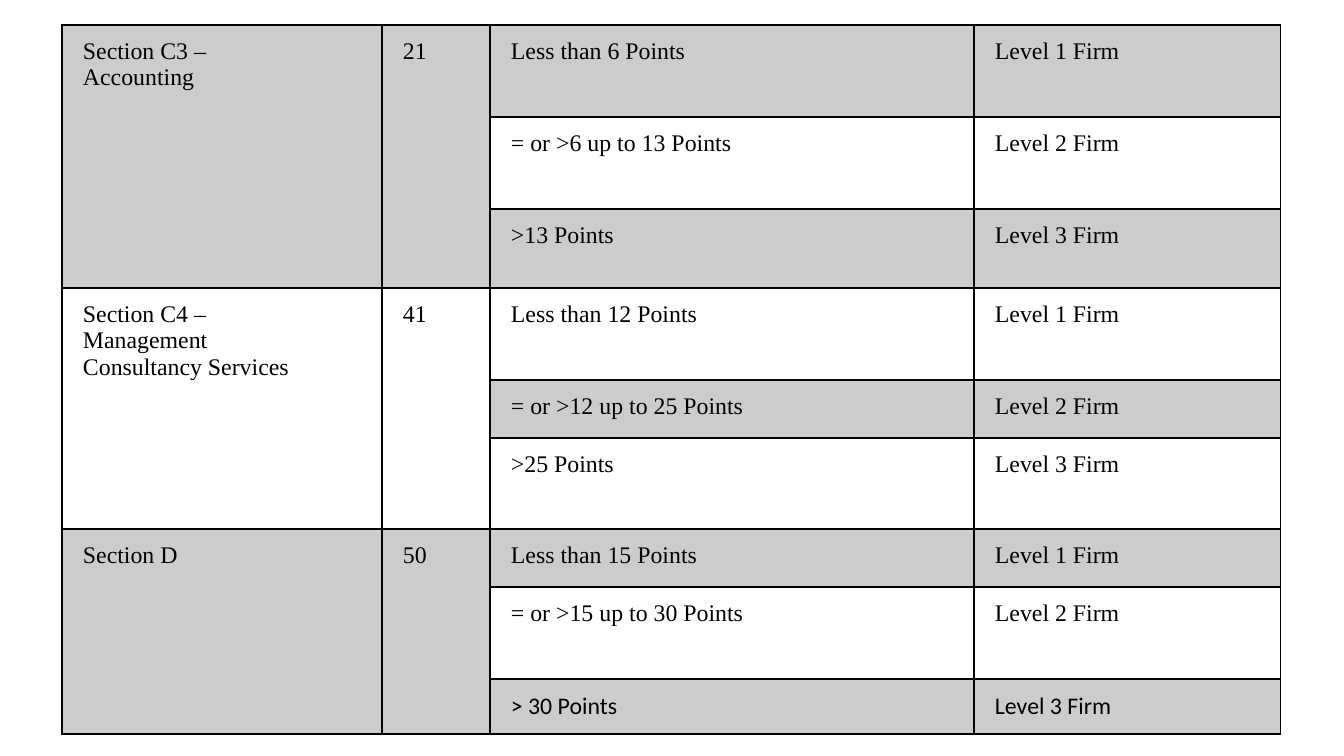
from lxml import etree
from pptx import Presentation
from pptx.dml.color import RGBColor
from pptx.enum.text import MSO_ANCHOR, PP_ALIGN
from pptx.oxml.ns import qn
from pptx.util import Pt

TOP = MSO_ANCHOR.TOP
LEFT = PP_ALIGN.LEFT
EMU_PER_PX = 914400 / 100.8
BLACK = "000000"
SERIF = "Times New Roman"
SANS = "Calibri"

COLUMN_WIDTHS = [320, 108, 484, 307]
ROW_HEIGHTS = [92, 92, 79, 92, 58, 91, 58, 92, 55]
SECTIONS = [
    ("Section C3 –\nAccounting", "21",
     ["Less than 6 Points", "= or >6 up to 13 Points", ">13 Points"]),
    ("Section C4 –\nManagement\nConsultancy Services", "41",
     ["Less than 12 Points", "= or >12 up to 25 Points", ">25 Points"]),
    ("Section D", "50",
     ["Less than 15 Points", "= or >15 up to 30 Points", "> 30 Points"]),
]
LEVELS = 3


def px(length):
    return round(length * EMU_PER_PX)


def color(value):
    return RGBColor.from_string(value)


class SlideBuilder:
    text_size = 17
    border_width = 1
    shade_percent = 20

    def __init__(self, presentation):
        self.slide = presentation.slides.add_slide(presentation.slide_layouts[6])

    def table(self, left, top, widths, heights):
        frame = self.slide.shapes.add_table(
            len(heights), len(widths), px(left), px(top), px(sum(widths)), px(sum(heights)))
        table = frame.table
        table.first_row = False
        table.horz_banding = False
        for column, width in zip(table.columns, widths):
            column.width = px(width)
        for row, height in zip(table.rows, heights):
            row.height = px(height)
        return table

    def cell(self, cell, shaded):
        cell.margin_left = px(21)
        cell.margin_top = cell.margin_right = cell.margin_bottom = px(13)
        cell.vertical_anchor = TOP
        if shaded:
            cell.fill.solid()
            cell.fill.fore_color.rgb = color(BLACK)
        else:
            cell.fill.background()
        properties = cell._tc.get_or_add_tcPr()
        for shade in properties.iter(qn("a:srgbClr")):
            etree.SubElement(shade, qn("a:alpha"), val=str(self.shade_percent * 1000))
        for index, side in enumerate(("a:lnL", "a:lnR", "a:lnT", "a:lnB")):
            line = etree.Element(qn(side), w=str(Pt(self.border_width)))
            fill = etree.SubElement(line, qn("a:solidFill"))
            etree.SubElement(fill, qn("a:srgbClr"), val=BLACK)
            properties.insert(index, line)

    def text(self, cell, text, font):
        cell.text_frame.text = text
        for paragraph in cell.text_frame.paragraphs:
            paragraph.alignment = LEFT
            for run in paragraph.runs:
                run.font.name = font
                run.font.size = Pt(self.text_size)
                run.font.bold = False
                run.font.color.rgb = color(BLACK)


def main():
    presentation = Presentation()
    presentation.slide_width = px(1344)
    presentation.slide_height = px(756)
    builder = SlideBuilder(presentation)
    table = builder.table(62, 25, COLUMN_WIDTHS, ROW_HEIGHTS)
    last_row = len(ROW_HEIGHTS) - 1

    for section_index, (section, points, ranges) in enumerate(SECTIONS):
        first = section_index * LEVELS
        for level, point_range in enumerate(ranges):
            row = first + level
            for column in range(len(COLUMN_WIDTHS)):
                shading_row = first if column < 2 else row
                builder.cell(table.cell(row, column), shading_row % 2 == 0)
            font = SANS if row == last_row else SERIF
            builder.text(table.cell(row, 2), point_range, font)
            builder.text(table.cell(row, 3), f"Level {level + 1} Firm", font)
        for column, label in enumerate((section, points)):
            origin = table.cell(first, column)
            origin.merge(table.cell(first + LEVELS - 1, column))
            builder.text(origin, label, SERIF)

    presentation.save("out.pptx")


if __name__ == "__main__":
    main()
